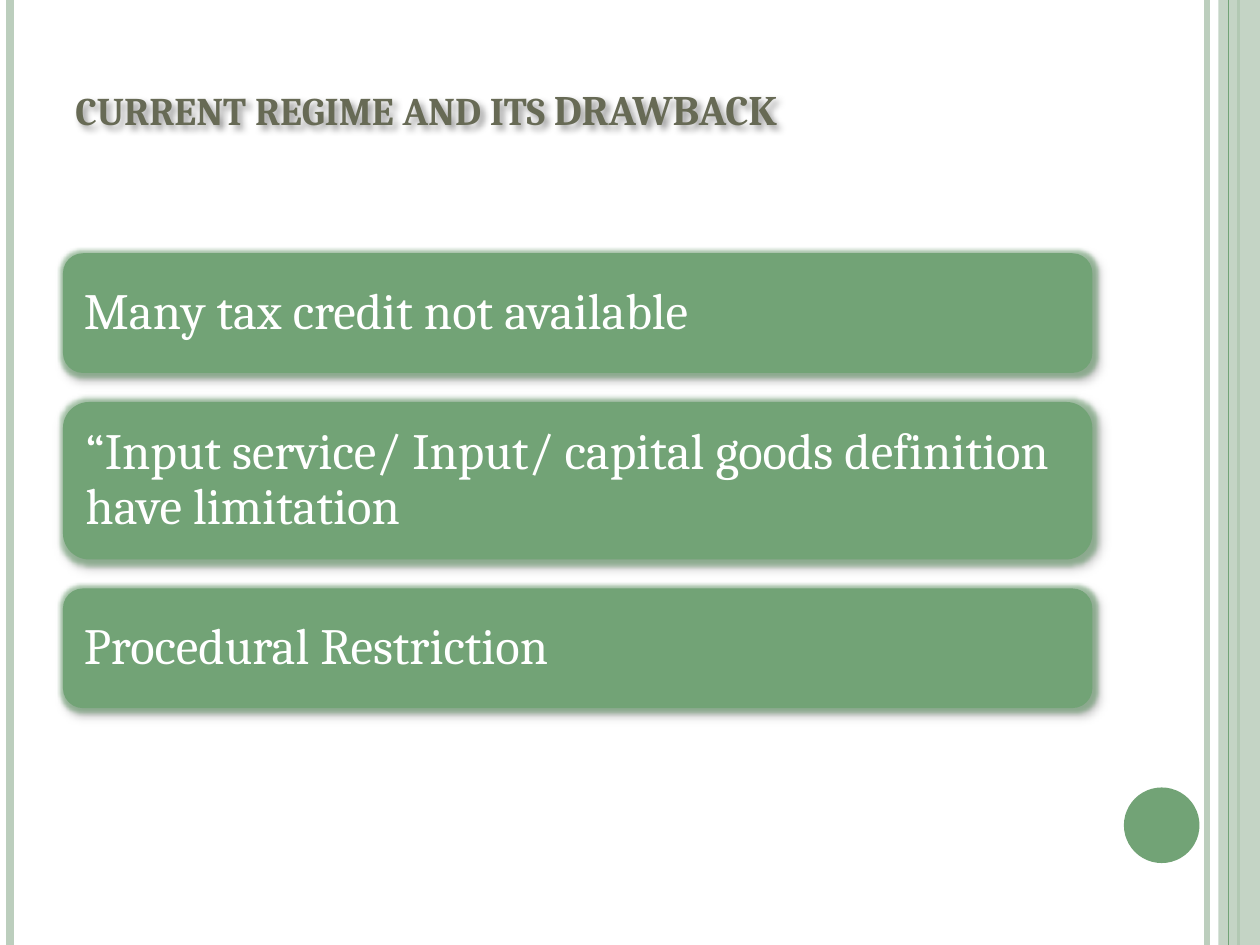
from lxml import etree
from pptx import Presentation
from pptx import util as u
from pptx.dml.color import RGBColor
from pptx.enum import shapes, text
from pptx.oxml.ns import qn

COLORS = {"green": "72A376", "pale": "BCCEBD", "olive": "676A55",
          "white": "FFFFFF", "black": "000000"}


def add_color(parent, color, alpha):
    """Append a partly transparent colour, alpha in percent."""
    srgb = etree.SubElement(parent, qn("a:srgbClr"), val=COLORS[color])
    etree.SubElement(srgb, qn("a:alpha"), val=str(alpha * 1000))


class SlideBuilder:
    font = "Cambria"

    def __init__(self, slide):
        self.slide = slide

    def rule(self, x, color, width):
        """Full-height vertical line."""
        rule = self.slide.shapes.add_connector(
            shapes.MSO_CONNECTOR.STRAIGHT, u.Inches(x), 0, u.Inches(x), u.Inches(7.5))
        rule.line.color.rgb = RGBColor.from_string(COLORS[color])
        rule.line.width = u.Pt(width)
        etree.SubElement(rule._element.spPr, qn("a:effectLst"))

    def shape(self, kind, box, color, alpha=100):
        shape = self.slide.shapes.add_shape(kind, *map(u.Inches, box))
        shape.fill.solid()
        shape.fill.fore_color.rgb = RGBColor.from_string(COLORS[color])
        if alpha < 100:
            fill = shape._element.spPr.find(qn("a:solidFill"))
            fill.remove(fill[0])
            add_color(fill, color, alpha)
        shape.line.fill.background()
        shape.shadow.inherit = False
        return shape

    def shade(self, shape, blur, distance, alpha, angle, glow=0):
        """Soft drop shadow with an optional green glow."""
        shape.shadow.inherit = False
        effects = shape._element.spPr.find(qn("a:effectLst"))
        if glow:
            halo = etree.SubElement(effects, qn("a:glow"), rad=str(u.Pt(glow)))
            add_color(halo, "green", 60)
        shadow = etree.SubElement(
            effects, qn("a:outerShdw"), blurRad=str(u.Pt(blur)),
            dist=str(u.Pt(distance)), dir=str(angle * 60000), rotWithShape="0")
        add_color(shadow, "black", alpha)

    def label(self, shape, runs, color, frame_format, line_spacing=1.0, **font_format):
        """Fill a shape with one left-aligned paragraph of (text, size) runs."""
        frame = shape.text_frame
        for key, value in {"word_wrap": True, **frame_format}.items():
            setattr(frame, key, value)
        paragraph = frame.paragraphs[0]
        paragraph.alignment = text.PP_ALIGN.LEFT
        paragraph.line_spacing = line_spacing
        runs_made = []
        for words, size in runs:
            run = paragraph.add_run()
            run.text = words
            for key, value in {"name": self.font, "size": u.Pt(size), **font_format}.items():
                setattr(run.font, key, value)
            run.font.color.rgb = RGBColor.from_string(COLORS[color])
            runs_made.append(run)
        return runs_made

    def title(self, box, runs):
        title = self.slide.shapes.add_textbox(*map(u.Inches, box))
        anchor = {"vertical_anchor": text.MSO_ANCHOR.BOTTOM}
        for run in self.label(title, runs, "olive", anchor, bold=True):
            run._r.get_or_add_rPr().set("cap", "small")
        title.fill.background()
        self.shade(title, blur=4, distance=3, alpha=40, angle=45)

    def card(self, box, words):
        card = self.shape(shapes.MSO_SHAPE.ROUNDED_RECTANGLE, box, "green")
        self.shade(card, blur=4.5, distance=2.6, alpha=30, angle=53, glow=5)
        margins = {f"margin_{side}": u.Inches(0.12)
                   for side in ("left", "top", "right", "bottom")}
        self.label(card, [(words, 29)], "white",
                   {"vertical_anchor": text.MSO_ANCHOR.MIDDLE, **margins}, line_spacing=0.9)


def main():
    deck = Presentation()
    deck.slide_width, deck.slide_height = u.Inches(10), u.Inches(7.5)
    builder = SlideBuilder(deck.slides.add_slide(deck.slide_layouts[6]))

    # Side bands and page dot
    for x, color, width in ((9.58, "pale", 3), (0.08, "pale", 4.5), (9.83, "green", 1.5)):
        builder.rule(x, color, width)
    builder.shape(shapes.MSO_SHAPE.RECTANGLE, (9.67, 0, 0.33, 7.5), "pale", alpha=87)
    builder.rule(9.75, "green", 0.75)
    builder.shape(shapes.MSO_SHAPE.OVAL, (8.92, 6.25, 0.6, 0.6), "green")

    # Title
    builder.title((0.5, 0.5, 8.17, 0.63),
                  [("current regime and its ", 28), ("drawback", 30)])

    # Drawback cards, stacked with an equal gap
    top, gap = 2.01, 0.23
    for words, height in (
            ("Many tax credit not available", 0.95),
            ("“Input service/ Input/ capital goods definition have limitation", 1.25),
            ("Procedural Restriction", 0.95)):
        builder.card((0.5, top, 8.17, height), words)
        top += height + gap

    deck.save("out.pptx")


if __name__ == "__main__":
    main()
